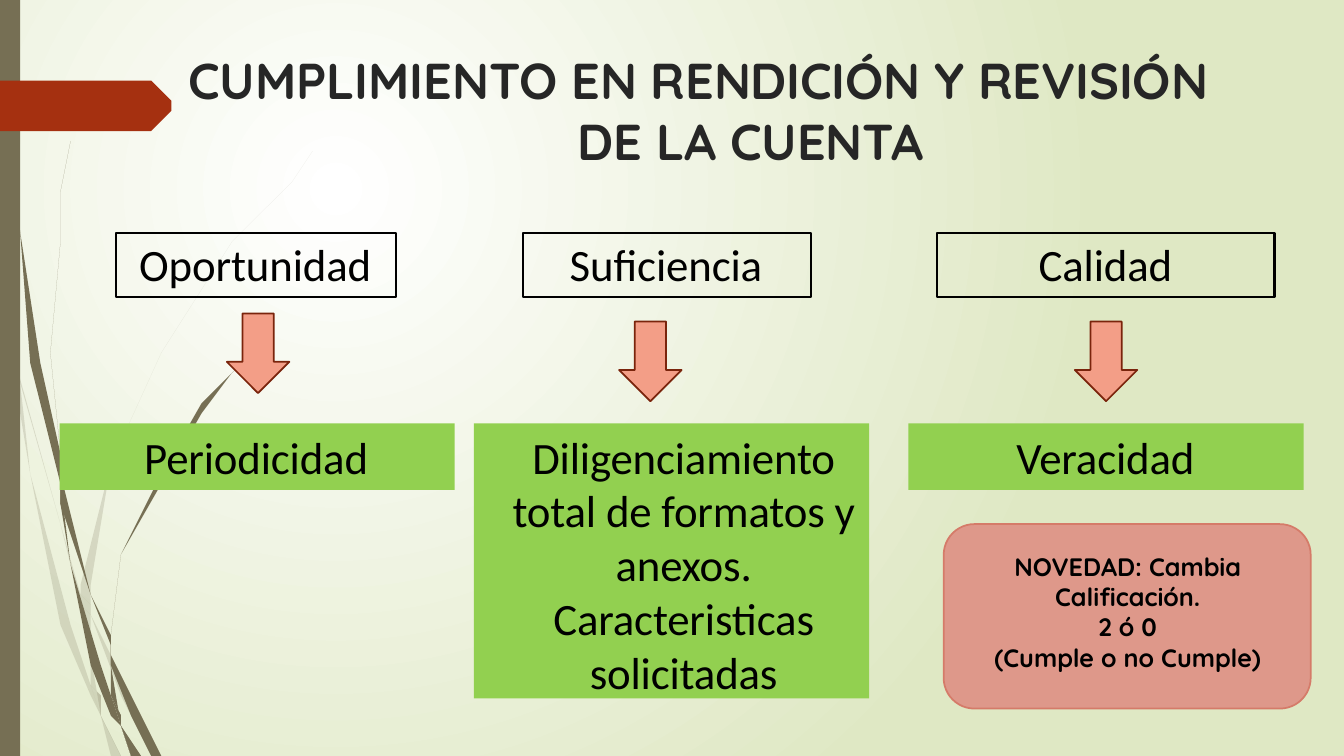
from lxml.etree import SubElement
from pptx import Presentation
from pptx.dml.color import RGBColor
from pptx.enum.shapes import MSO_SHAPE
from pptx.enum.text import MSO_ANCHOR, PP_ALIGN
from pptx.oxml.ns import qn
from pptx.util import Inches, Pt

# The grid has square cells: 133.3 columns by 75 rows
CELL = Inches(0.1)
COLUMNS, ROWS = 133.3, 75

WHITE = RGBColor(0xFF, 0xFF, 0xFF)
PALE_GREEN = RGBColor(0xDF, 0xE8, 0xC4)
OLIVE = RGBColor(0x76, 0x6F, 0x54)
RUST = RGBColor(0xA5, 0x30, 0x10)
CHARCOAL = RGBColor(0x26, 0x26, 0x26)
BLACK = RGBColor(0x00, 0x00, 0x00)
GREEN = RGBColor(0x92, 0xD0, 0x50)
SALMON = RGBColor(0xF3, 0x9E, 0x87)
DARK_RUST = RGBColor(0x7A, 0x24, 0x0C)
ROSE = RGBColor(0xDE, 0x98, 0x8A)
DARK_ROSE = RGBColor(0xD5, 0x7B, 0x69)

# Outlines of the grass blades, in grid cells
FAINT_BLADES = [
    [(1.1, 35), (0.9, 32.2), (0, 28.2), (0, 29.9), (1, 34.4)],
    [(5.8, 52.2), (8.4, 59.9), (8.5, 58.6), (6.2, 52), (1.4, 34.5), (1.7, 37.6)],
    [(9.2, 60.7), (8.8, 59.6), (8.8, 61), (12.3, 69.4), (15, 75.1), (15.5, 75.1),
     (12.7, 69.2)],
    [(11.9, 75.1), (12.4, 75.1), (10.5, 71.1)],
    [(9.3, 68.3), (7, 61.9), (3.1, 46.9), (1.7, 37.6), (1.1, 35), (2.8, 47),
     (6.5, 62.1), (9.2, 69.3), (10.1, 71.4), (9.9, 70.7)],
    [(8.4, 59.9), (8.7, 64.6), (9.3, 68.3), (9.6, 69.2), (10.5, 71.1),
     (10.3, 70.6), (9.1, 64.6), (8.8, 61), (8.8, 60.8)],
    [(8.8, 58.4), (11, 46.2), (16, 34.9), (22.9, 24.5), (26.8, 19.8), (29, 17.5),
     (31.2, 15.4), (31.2, 15.3), (28.9, 17.5), (26.8, 19.7), (22.8, 24.4),
     (15.8, 34.8), (10.7, 46.1), (8.5, 58.4), (8.5, 58.6), (8.8, 59.6)],
    [(10.1, 71.4), (11.4, 75.1), (11.9, 75.1)],
    [(8.8, 60.8), (8.8, 61), (8.8, 59.6), (8.5, 58.6), (8.4, 59.9)],
    [(9.6, 69.2), (9.3, 68.3), (9.9, 70.7), (10.1, 71.4), (11.9, 75.1), (10.5, 71.1)],
]
DARK_BLADES = [
    [(0.7, 11), (1.7, 23.3), (3.3, 35.5), (5.6, 47.7), (5.7, 48.1), (5.5, 45.7),
     (5.5, 45.3), (3.6, 35.5), (1.9, 23.2), (0.8, 10.9), (0.5, 4.8), (0.4, 0),
     (0.3, 0), (0.4, 4.8)],
    [(8.8, 59.2), (10.6, 64.5), (10.6, 63.3), (10.6, 63.1), (9.3, 59), (6, 47.2),
     (6.4, 50.5)],
    [(11.3, 64.9), (11, 64.1), (11.1, 65.6), (13.2, 70.8), (15.2, 74.9),
     (15.7, 74.9), (13.6, 70.6)],
    [(11, 69.1), (9.8, 65.7), (7.2, 55.6), (6.4, 50.5), (5.7, 47.7), (6.8, 55.7),
     (9.3, 65.9), (11.1, 70.8), (11.7, 72.2), (11.6, 71.7)],
    [(6, 47.2), (5.8, 45.3), (5.4, 34.9), (5.8, 24.5), (6.3, 19.3), (7, 14.1),
     (6.2, 19.3), (5.6, 24.5), (5.2, 34.9), (5.5, 44.9)],
    [(13.3, 74.9), (13.6, 74.9), (12.2, 71.9)],
    [(5.7, 47.7), (6.4, 50.5), (6, 47.2), (5.5, 44.9), (5.5, 45.3)],
    [(11.1, 63.3), (12.5, 55.2), (15.8, 47.6), (20.5, 40.6), (23.1, 37.4),
     (24.5, 35.9), (26.1, 34.4), (26, 34.4), (24.5, 35.8), (23.1, 37.3),
     (20.4, 40.5), (15.6, 47.4), (12.2, 55.1), (10.6, 63.1), (11, 64.1)],
    [(11.7, 72.2), (12.7, 74.9), (13.1, 74.9)],
    [(10.6, 64.5), (11, 69.1), (11.6, 70.6), (12.2, 71.9), (12.1, 71.6),
     (11.1, 65.6), (10.9, 65.1)],
    [(10.6, 64.5), (10.9, 65.1), (11.1, 65.6), (11, 64.1), (10.6, 63.1), (10.6, 63.3)],
    [(11.6, 70.6), (11, 69.1), (11.6, 71.7), (11.7, 72.2), (13, 74.9), (13.3, 74.9),
     (12.2, 71.9)],
]
TITLE_TAG = [(17.3, 10.8), (14.8, 13.3), (14.6, 13.4), (13.6, 13.4), (0, 13.3),
             (0, 7.8), (13.6, 7.8), (14.6, 7.8), (14.8, 7.9), (17.3, 10.4), (17.4, 10.6)]

# Criterion, left, width, indent; arrow left, top; answer, left, height, indent, alignment
CRITERIA = [
    (("Oportunidad", 11.5, 27.8, 2.3), (22.5, 31.1),
     ("Periodicidad", 5.9, 6.6, 8.4, PP_ALIGN.LEFT)),
    (("Suficiencia", 51.9, 28.5, 4.6), (61.4, 31.9),
     ("Diligenciamiento total de formatos y anexos. Caracteristicas solicitadas",
      47, 27.3, 2.4, PP_ALIGN.CENTER)),
    (("Calidad", 92.9, 33.5, 10.1), (106.6, 31.9),
     ("Veracidad", 90.1, 6.6, 10.7, PP_ALIGN.LEFT)),
]


def cells(*counts):
    return [round(count * CELL) for count in counts]


def paint(shape, fill=None, line=None, line_width=1.25):
    shape.shadow.inherit = False
    if fill is None:
        shape.fill.background()
    else:
        shape.fill.solid()
        shape.fill.fore_color.rgb = fill
    if line is None:
        shape.line.fill.background()
    else:
        shape.line.color.rgb = line
        shape.line.width = Pt(line_width)


def add_box(slide, kind, place, **colours):
    shape = slide.shapes.add_shape(kind, *cells(*place))
    paint(shape, **colours)
    return shape


def add_outline(slide, points, colour, opacity=None):
    builder = slide.shapes.build_freeform(*points[0], scale=CELL)
    builder.add_line_segments(points[1:], close=True)
    shape = builder.convert_to_shape()
    paint(shape, fill=colour)
    if opacity is not None:
        solid_colour = shape.fill._xPr.find(qn("a:solidFill"))[0]
        SubElement(solid_colour, qn("a:alpha"), val=str(opacity * 1000))


def write(shape, text, font="Calibri", size=32, colour=BLACK, bold=False, spacing=0,
          align=PP_ALIGN.LEFT, margins=(0, 0, 0, 0), indent=0, first_line=0,
          line_spacing=None):
    """Write one paragraph per line of text; spacing is in points, lengths in cells."""
    frame = shape.text_frame
    frame.word_wrap = True
    frame.vertical_anchor = MSO_ANCHOR.TOP
    (frame.margin_left, frame.margin_top,
     frame.margin_right, frame.margin_bottom) = cells(*margins)
    for number, line in enumerate(text.split("\n")):
        paragraph = frame.paragraphs[0] if number == 0 else frame.add_paragraph()
        paragraph.alignment = align
        paragraph.line_spacing = line_spacing
        properties = paragraph._p.get_or_add_pPr()
        properties.set("marL", str(cells(indent)[0]))
        properties.set("indent", str(cells(first_line)[0]))
        run = paragraph.add_run()
        run.text = line
        run.font.name, run.font.size, run.font.bold = font, Pt(size), bold
        run.font.color.rgb = colour
        run._r.get_or_add_rPr().set("spc", str(round(spacing * 100)))


def add_background(slide):
    """Fill the slide with a round gradient centred in its upper left quarter."""
    fill = slide.background.fill
    fill.gradient()
    for stop, colour in zip(fill.gradient_stops, (WHITE, PALE_GREEN)):
        stop.color.rgb = colour
    gradient = slide.element.find(".//" + qn("a:gradFill"))
    linear = gradient.find(qn("a:lin"))
    round_gradient = linear.makeelement(qn("a:path"), {"path": "circle"})
    SubElement(round_gradient, qn("a:fillToRect"), l="50000", t="50000",
               r="100000", b="100000")
    gradient.replace(linear, round_gradient)


def add_decoration(slide):
    for blade in FAINT_BLADES:
        add_outline(slide, blade, OLIVE, opacity=20)
    for blade in DARK_BLADES:
        add_outline(slide, blade, OLIVE)
    add_box(slide, MSO_SHAPE.RECTANGLE, (0, 0, 2, ROWS), fill=OLIVE)
    add_outline(slide, TITLE_TAG, RUST)


def add_criterion(slide, criterion, arrow, answer):
    name, left, width, indent = criterion
    box = add_box(slide, MSO_SHAPE.RECTANGLE, (left, 23.1, width, 6.4),
                  line=BLACK, line_width=1.56)
    write(box, name, spacing=-0.1, margins=(0, 0.4, 0, 0), indent=indent)
    text, left, height, indent, align = answer
    box = add_box(slide, MSO_SHAPE.RECTANGLE, (left, 42, 39.2, height), fill=GREEN)
    write(box, text, spacing=-0.15, margins=(0, 0.6, 0, 0), indent=indent, align=align)
    add_box(slide, MSO_SHAPE.DOWN_ARROW, (*arrow, 6.2, 7.9), fill=SALMON, line=DARK_RUST)


def main():
    presentation = Presentation()
    presentation.slide_width, presentation.slide_height = cells(COLUMNS, ROWS)
    slide = presentation.slides.add_slide(presentation.slide_layouts[6])
    add_background(slide)
    add_decoration(slide)
    title = slide.shapes.add_textbox(*cells(18.6, 3.9, 105.3, 13))
    write(title, "CUMPLIMIENTO EN RENDICIÓN Y REVISIÓN DE LA CUENTA", font="Quicksand",
          size=36, colour=CHARCOAL, bold=True, spacing=-0.1, margins=(0, 1, 0, 0),
          indent=38.7, first_line=-38.6, line_spacing=Pt(43.2))
    for criterion, arrow, answer in CRITERIA:
        add_criterion(slide, criterion, arrow, answer)
    add_box(slide, MSO_SHAPE.ROUNDED_RECTANGLE, (93.6, 52, 36.4, 18.3),
            fill=ROSE, line=DARK_ROSE)
    news = slide.shapes.add_textbox(*cells(95.6, 54.2, 32.5, 13.1))
    write(news, "NOVEDAD: Cambia Calificación.\n2 ó 0\n(Cumple o no Cumple)",
          font="Quicksand", size=18, bold=True, align=PP_ALIGN.CENTER,
          margins=(1, 0.5, 1, 0.5))
    presentation.save("out.pptx")


if __name__ == "__main__":
    main()
